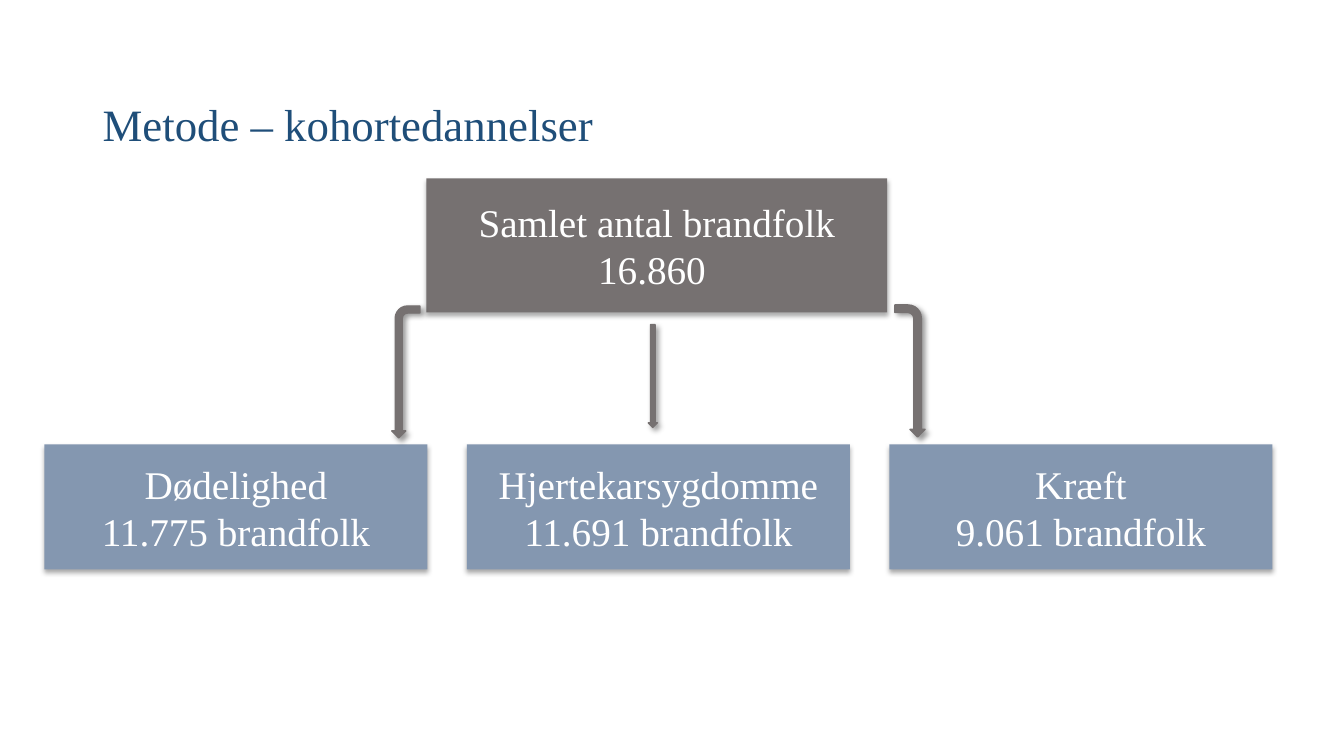
from lxml.etree import SubElement
from pptx import Presentation
from pptx.dml.color import RGBColor
from pptx.enum.shapes import MSO_SHAPE
from pptx.enum.text import MSO_ANCHOR, PP_ALIGN
from pptx.oxml.ns import qn
from pptx.util import Inches, Pt

GREY = RGBColor(0x76, 0x71, 0x71)
BLUE = RGBColor(0x84, 0x97, 0xB0)
NAVY = RGBColor(0x1F, 0x4E, 0x79)
WHITE = RGBColor(0xFF, 0xFF, 0xFF)
FONT = "Times New Roman"

# Shadows: opacity in percent, blur and distance in points, angle in degrees
BOX_SHADOW = (32, 3.5, 2.2, 90)
ARROW_SHADOW = (40, 4, 3, 45)

COHORTS = [
    ("Dødelighed", "11.775 brandfolk"),
    ("Hjertekarsygdomme", "11.691 brandfolk"),
    ("Kræft", "9.061 brandfolk"),
]


def add_span(para, text, size, color):
    span = para.add_run()
    span.text = text
    span.font.name = FONT
    span.font.size = Pt(size)
    span.font.color.rgb = color


def set_shadow(shape, opacity, blur, distance, angle):
    shape.shadow.inherit = False
    effects = shape.element.spPr.find(qn("a:effectLst"))
    outer = SubElement(effects, qn("a:outerShdw"), blurRad=str(Pt(blur)),
                       dist=str(Pt(distance)), dir=str(angle * 60000),
                       algn="ctr", rotWithShape="0")
    color = SubElement(outer, qn("a:srgbClr"), val="000000")
    SubElement(color, qn("a:alpha"), val=str(opacity * 1000))


def add_filled(page, kind, left, top, width, height, fill, shadow):
    shape = page.shapes.add_shape(kind, Inches(left), Inches(top),
                                  Inches(width), Inches(height))
    shape.fill.solid()
    shape.fill.fore_color.rgb = fill
    set_shadow(shape, *shadow)
    return shape


def add_box(page, left, top, width, height, fill, lines):
    box = add_filled(page, MSO_SHAPE.RECTANGLE, left, top, width, height, fill, BOX_SHADOW)
    box.line.fill.background()
    frame = box.text_frame
    frame.word_wrap = True
    frame.vertical_anchor = MSO_ANCHOR.MIDDLE
    for index, line in enumerate(lines):
        para = frame.add_paragraph() if index else frame.paragraphs[0]
        para.alignment = PP_ALIGN.CENTER
        add_span(para, line, 28, WHITE)


def add_arrow(page, kind, left, top, width, height, rotation=0, flipped=False):
    arrow = add_filled(page, kind, left, top, width, height, GREY, ARROW_SHADOW)
    arrow.line.color.rgb = GREY
    arrow.line.width = Pt(1)
    arrow.rotation = rotation
    if flipped:
        arrow.element.spPr.find(qn("a:xfrm")).set("flipV", "1")


def add_title(page, left, top, width, height):
    box = page.shapes.add_textbox(Inches(left), Inches(top), Inches(width), Inches(height))
    frame = box.text_frame
    frame.word_wrap = True
    frame.margin_top = Inches(0.62)
    para = frame.paragraphs[0]
    para.line_spacing = 0.9
    add_span(para, "Metode – kohortedannelser", 32, NAVY)


def add_cohorts(page, left, top, width, height, gap):
    for index, lines in enumerate(COHORTS):
        add_box(page, left + index * (width + gap), top, width, height, BLUE, lines)


def add_arrows(page, left, top):
    add_arrow(page, MSO_SHAPE.DOWN_ARROW, left + 3.06, top, 0.09, 1.02)
    add_arrow(page, MSO_SHAPE.BENT_ARROW, left + 5, top + 0.31, 1.31, 0.3, rotation=90)
    add_arrow(page, MSO_SHAPE.BENT_ARROW, left, top + 0.33, 1.31, 0.28,
              rotation=90, flipped=True)


def main():
    deck = Presentation()
    deck.slide_width = Inches(13.33)
    deck.slide_height = Inches(7.5)
    page = deck.slides.add_slide(deck.slide_layouts[6])

    # Whole group, its three cohorts, and the arrows between them
    add_box(page, 4.23, 1.77, 4.57, 1.33, GREY, ["Samlet antal brandfolk", "16.860 "])
    add_cohorts(page, 0.44, 4.41, 3.8, 1.24, gap=0.39)
    add_arrows(page, 3.37, 3.22)

    # Heading
    add_title(page, 0.92, 0.4, 11.5, 1.45)
    deck.save("out.pptx")


if __name__ == "__main__":
    main()
